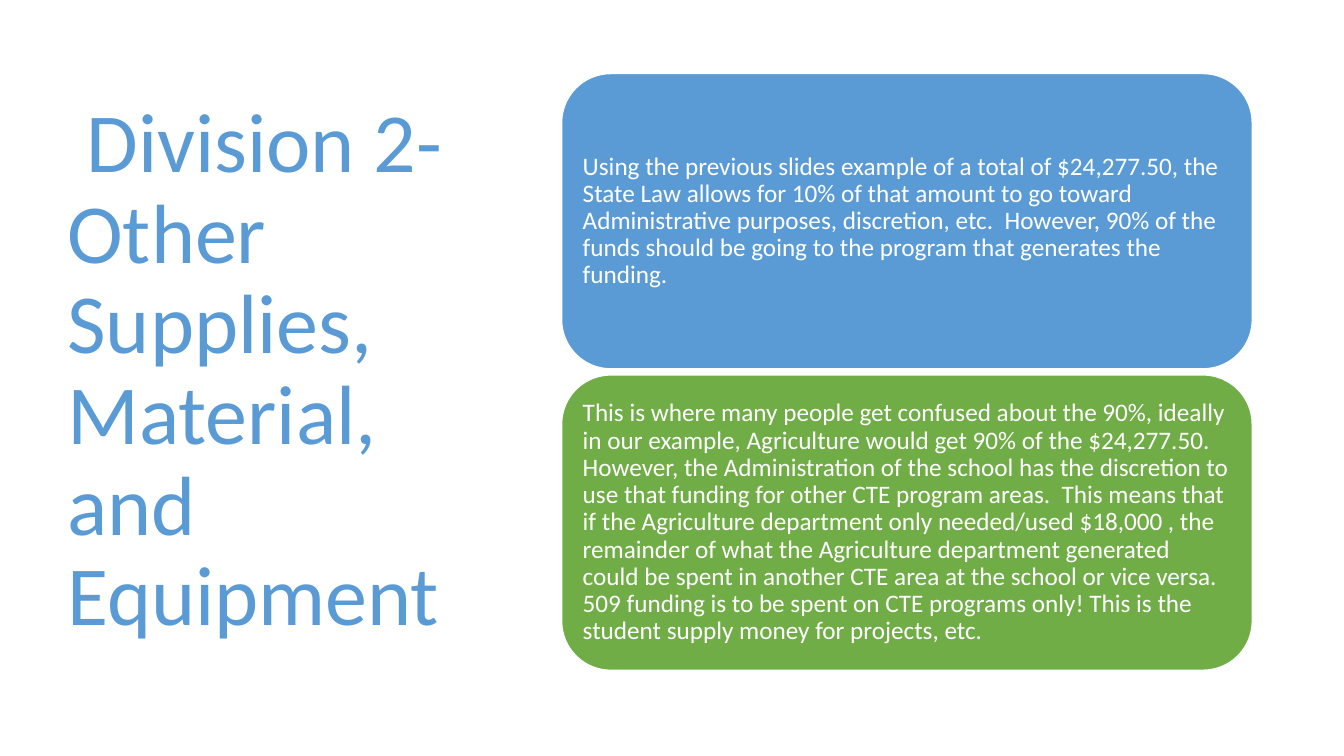
from dataclasses import dataclass

from pptx import Presentation
from pptx import util as u
from pptx.dml.color import RGBColor
from pptx.enum import shapes, text


@dataclass(frozen=True)
class Theme:
    font: str = "Calibri"
    blue: RGBColor = RGBColor(0x5B, 0x9B, 0xD5)
    green: RGBColor = RGBColor(0x70, 0xAD, 0x47)
    white: RGBColor = RGBColor(0xFF, 0xFF, 0xFF)
    title_size: float = 60
    body_size: float = 18


theme = Theme()


def add_text(s, content, box, *, size, color, inset_x=0.1, inset_y=0.05, after=0):
    """Add a wrapped, vertically centred text box; box is left, top, width, height in inches."""
    tf = s.shapes.add_textbox(*map(u.Inches, box)).text_frame
    tf.word_wrap = True
    tf.vertical_anchor = text.MSO_ANCHOR.MIDDLE
    tf.margin_left = tf.margin_right = u.Inches(inset_x)
    tf.margin_top = tf.margin_bottom = u.Inches(inset_y)
    p = tf.paragraphs[0]
    p.alignment = text.PP_ALIGN.LEFT
    p.line_spacing = 0.9
    p.space_after = u.Pt(after)
    r = p.add_run()
    r.text = content
    r.font.name = theme.font
    r.font.size = u.Pt(size)
    r.font.color.rgb = color


prs = Presentation()
prs.slide_width = u.Inches(13.33)
prs.slide_height = u.Inches(7.5)
s = prs.slides.add_slide(prs.slide_layouts[6])

add_text(s, " Division 2- Other Supplies, Material, and Equipment",
         (0.57, 0.68, 4.16, 6.02), size=theme.title_size, color=theme.blue)

cards = [
    (theme.blue,
     "Using the previous slides example of a total of $24,277.50, the State Law allows "
     "for 10% of that amount to go toward Administrative purposes, discretion, etc.  "
     "However, 90% of the funds should be going to the program that generates the funding."),
    (theme.green,
     "This is where many people get confused about the 90%, ideally in our example, "
     "Agriculture would get 90% of the $24,277.50.  However, the Administration of the "
     "school has the discretion to use that funding for other CTE program areas.  This "
     "means that if the Agriculture department only needed/used $18,000 , the remainder "
     "of what the Agriculture department generated could be spent in another CTE area at "
     "the school or vice versa.  509 funding is to be spent on CTE programs only! This is "
     "the student supply money for projects, etc."),
]
left, first_top, width, height, pitch, pad = 5.57, 0.73, 6.85, 2.93, 2.99, 0.14

for i, (fill, content) in enumerate(cards):
    top = first_top + i * pitch
    sp = s.shapes.add_shape(shapes.MSO_SHAPE.ROUNDED_RECTANGLE,
                            *map(u.Inches, (left, top, width, height)))
    sp.shadow.inherit = False
    sp.fill.solid()
    sp.fill.fore_color.rgb = fill
    sp.line.color.rgb = theme.white
    sp.line.width = u.Pt(1)
    add_text(s, content, (left + pad, top + pad, width - 2 * pad, height - 2 * pad),
             size=theme.body_size, color=theme.white,
             inset_x=0.07, inset_y=0.07, after=0.35 * theme.body_size)

prs.save("out.pptx")
